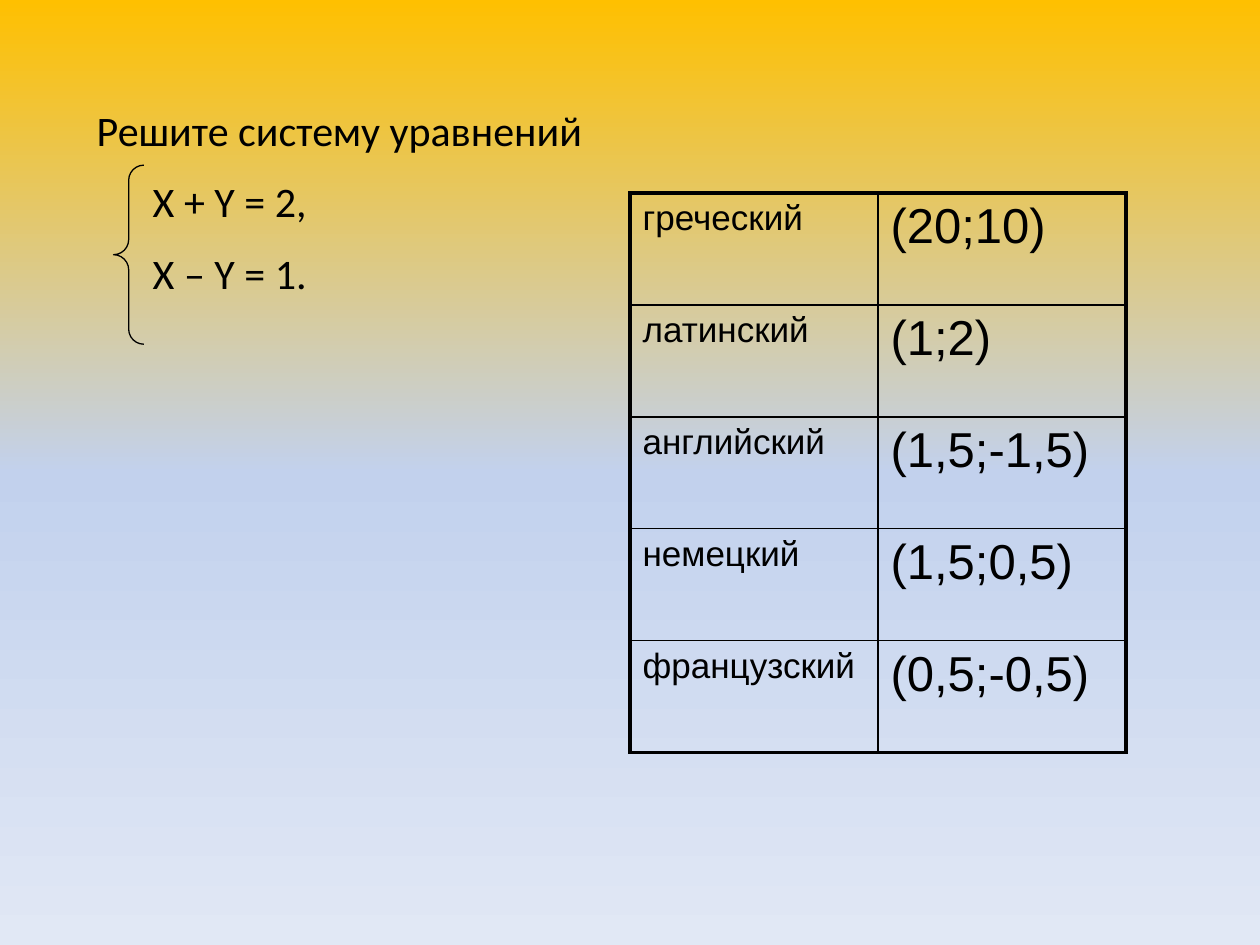
from copy import deepcopy

from pptx import Presentation
from pptx import util as u
from pptx.dml.color import RGBColor
from pptx.enum import shapes
from pptx.oxml import ns, parse_xml

COLORS = {"ink": "000000", "top": "FFC000", "middle": "C2D1ED", "bottom": "E1E8F5"}
ANSWERS = [
    ("греческий", "(20;10)"),
    ("латинский", "(1;2)"),
    ("английский", "(1,5;-1,5)"),
    ("немецкий", "(1,5;0,5)"),
    ("французский", "(0,5;-0,5)"),
]
EQUATIONS = ["X + Y = 2,", "X – Y = 1."]


def rgb(name):
    return RGBColor.from_string(COLORS[name])


class Sheet:
    body_font = "Calibri"
    table_font = "Arial"
    body_size = 24
    answer_sizes = (20, 28)
    thin, thick = 1, 2.25

    def __init__(self, slide):
        self.slide = slide

    def background(self, *names):
        fill = self.slide.background.fill
        fill.gradient()
        fill.gradient_angle = 270
        stops = self.slide.element.find(".//" + ns.qn("a:gsLst"))
        stops.insert(1, deepcopy(stops[0]))
        for i, (stop, name) in enumerate(zip(fill.gradient_stops, names)):
            stop.position = i / (len(names) - 1)
            stop.color.rgb = rgb(name)

    def style(self, paragraph, font, size):
        paragraph.font.name = font
        paragraph.font.size = u.Pt(size)
        paragraph.font.color.rgb = rgb("ink")

    def task(self, heading, equations, left, top, width, height):
        frame = self.slide.shapes.add_textbox(left, top, width, height).text_frame
        frame.word_wrap = True
        title = frame.paragraphs[0]
        title.text = heading
        self.style(title, self.body_font, self.body_size)
        for equation in equations:
            line = frame.add_paragraph()
            line.text = equation
            line.space_before = u.Pt(self.body_size / 2)
            line._p.get_or_add_pPr().set("marL", str(u.Cm(1.13)))
            self.style(line, self.body_font, self.body_size)

    def border(self, cell, side, width):
        cell._tc.get_or_add_tcPr().append(parse_xml(
            f'<a:ln{side} {ns.nsdecls("a")} w="{u.Pt(width)}"><a:solidFill>'
            f'<a:srgbClr val="{COLORS["ink"]}"/></a:solidFill></a:ln{side}>'))

    def answers(self, rows, left, top, width, height):
        row_count, column_count = len(rows), len(rows[0])
        table = self.slide.shapes.add_table(
            row_count, column_count, left, top, width, height).table
        table.first_row = table.horz_banding = False
        for r, row in enumerate(rows):
            for c, value in enumerate(row):
                cell = table.cell(r, c)
                cell.text = value
                self.style(cell.text_frame.paragraphs[0],
                           self.table_font, self.answer_sizes[c])
                outer = {"L": c == 0, "R": c == column_count - 1,
                         "T": r == 0, "B": r == row_count - 1}
                for side, is_outer in outer.items():
                    self.border(cell, side, self.thick if is_outer else self.thin)
                cell.fill.background()

    def brace(self, left, top, width, height):
        brace = self.slide.shapes.add_shape(
            shapes.MSO_SHAPE.LEFT_BRACE, left, top, width, height)
        brace.adjustments[0] = 0.5
        brace.adjustments[1] = 0.5
        brace.shadow.inherit = False
        brace.fill.background()
        brace.line.color.rgb = rgb("ink")
        brace.line.width = u.Pt(0.75)


def main():
    deck = Presentation()
    deck.slide_width, deck.slide_height = u.Cm(25.4), u.Cm(19.05)
    sheet = Sheet(deck.slides.add_slide(deck.slide_layouts[6]))
    sheet.background("top", "middle", "bottom")
    sheet.task("Решите систему уравнений", EQUATIONS,
               u.Cm(1.7), u.Cm(1.98), u.Cm(20), u.Cm(18.06))
    sheet.answers(ANSWERS, u.Cm(12.7), u.Cm(3.89), u.Cm(10), u.Cm(11.28))
    sheet.brace(u.Cm(2.29), u.Cm(3.33), u.Cm(0.61), u.Cm(3.61))
    deck.save("out.pptx")


if __name__ == "__main__":
    main()
